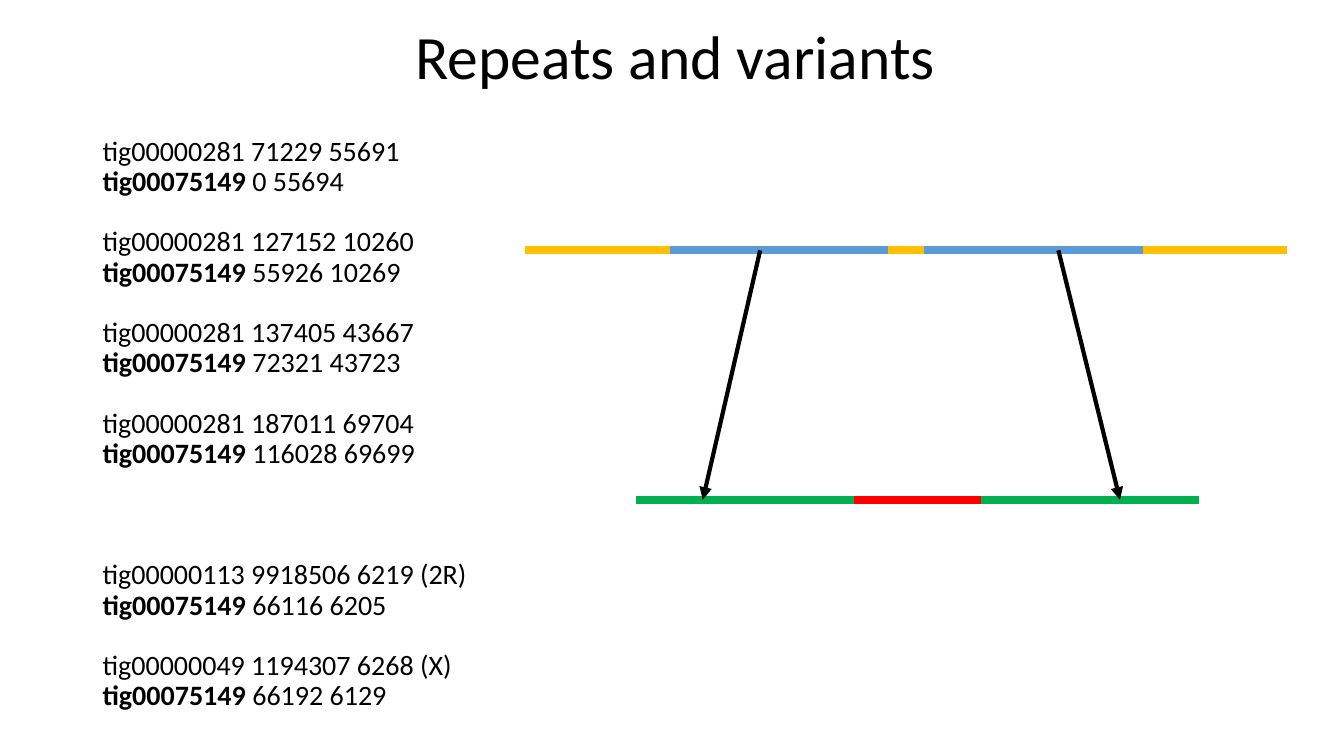
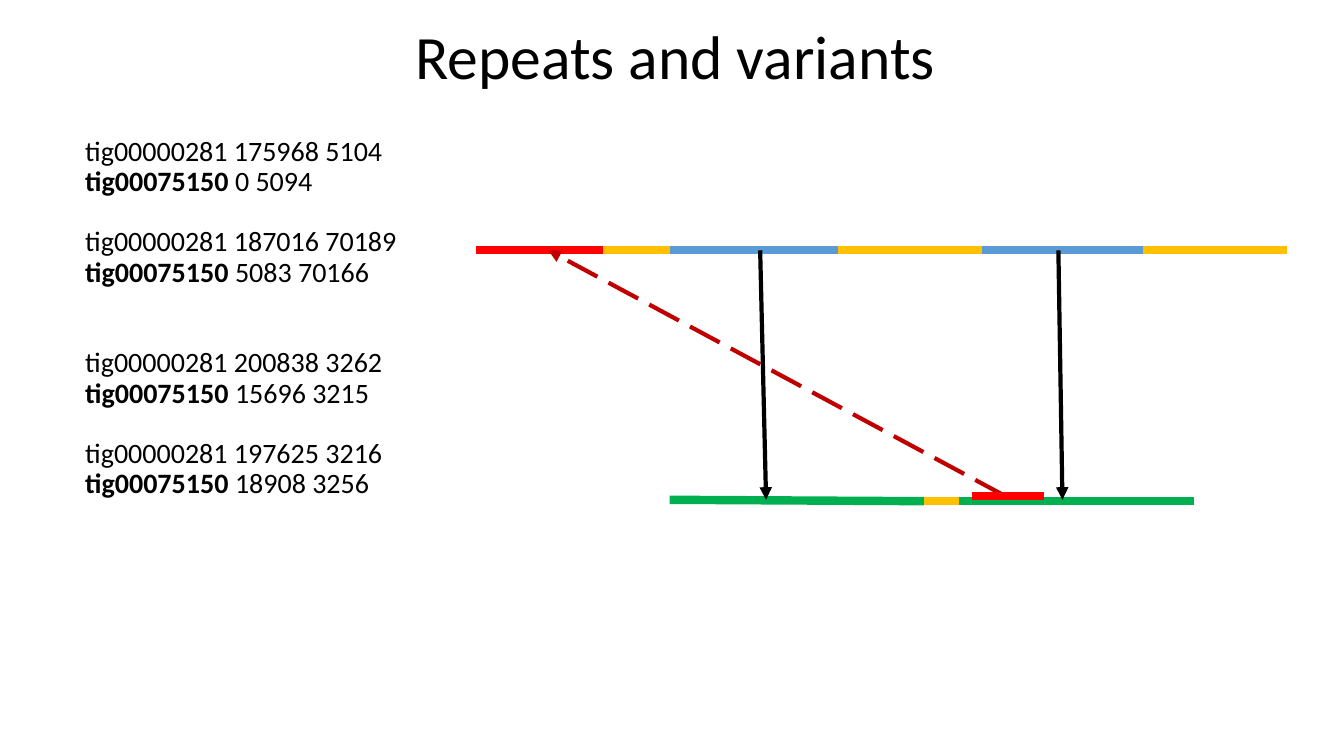
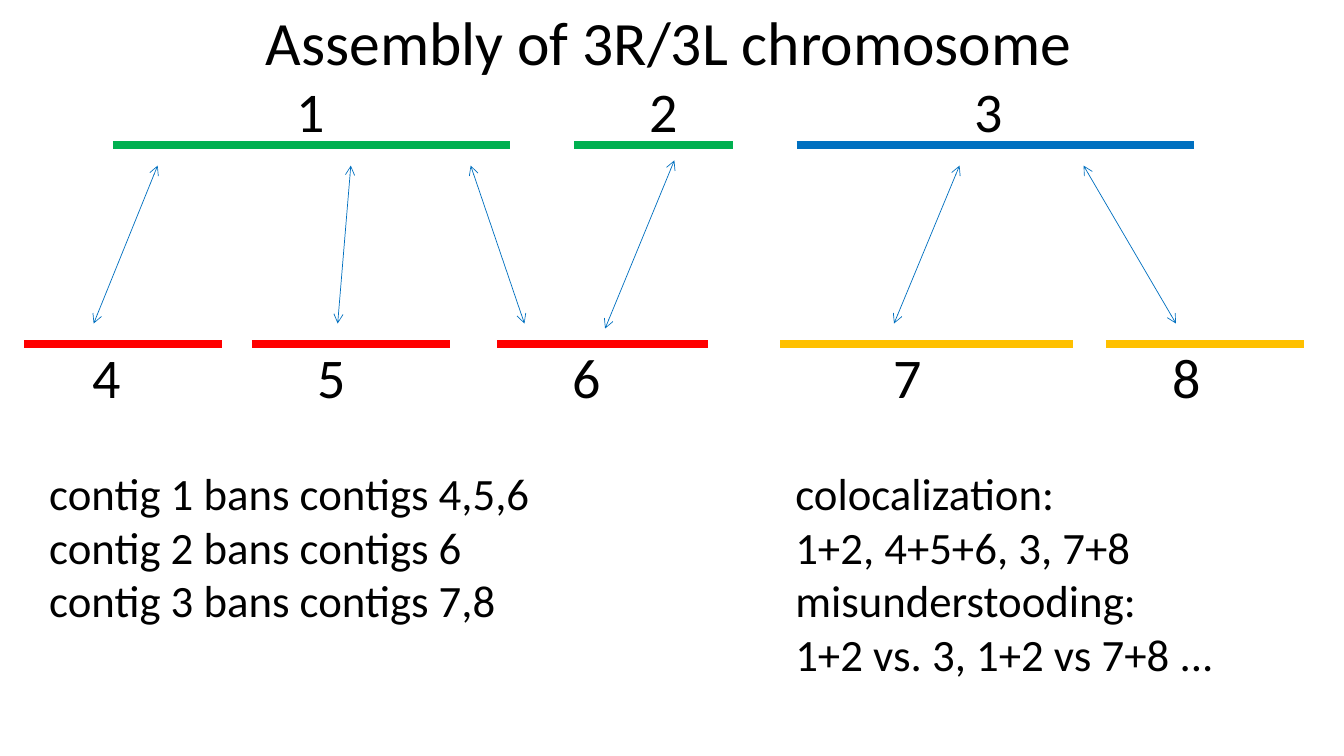
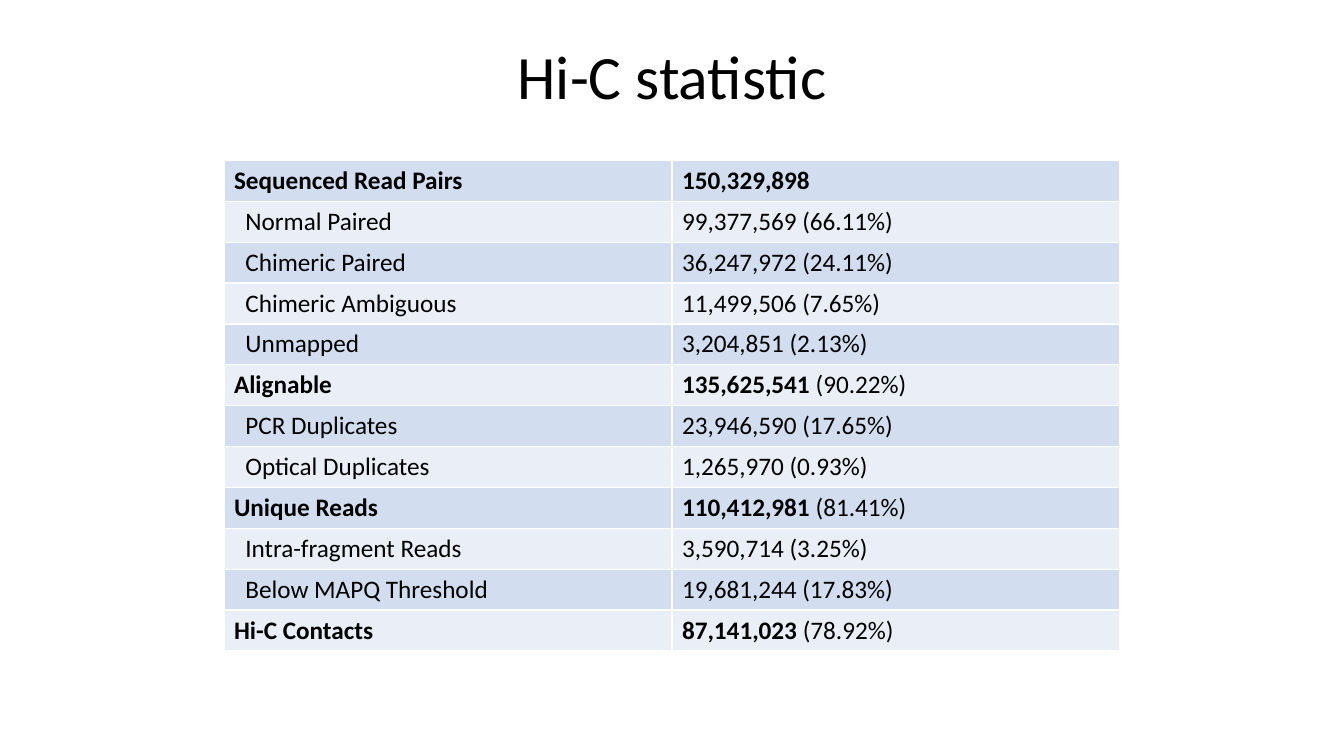
"""Build four slides on contig repeats, chromosome assembly and Hi-C statistics."""
import dataclasses

import lxml.etree
import pptx
import pptx.dml.color
import pptx.enum.dml
import pptx.enum.shapes
import pptx.enum.text
import pptx.oxml.ns
import pptx.util

Pt = pptx.util.Pt
Align = pptx.enum.text.PP_ALIGN
Anchor = pptx.enum.text.MSO_ANCHOR
Dash = pptx.enum.dml.MSO_LINE


@dataclasses.dataclass(frozen=True)
class Theme:
    font: str = "Calibri"
    black: str = "000000"
    white: str = "FFFFFF"
    green: str = "00B050"
    sky: str = "5B9BD5"
    blue: str = "0070C0"
    red: str = "FF0000"
    dark_red: str = "C00000"
    gold: str = "FFC000"
    row_fills: tuple = ("D2DEEF", "EAEFF7")
    title: float = 44
    label: float = 40
    note: float = 32
    listing: float = 20
    table: float = 18
    bar: float = 6
    arrow: float = 3
    thin_arrow: float = 0.5
    tight: float = 0.9
    listing_line: float = 21.63


THEME = Theme()

REPEAT_SLIDES = [
    {
        "title": "Repeats and variants",
        "contig": "tig00075149",
        "box": (66.2, 94.3, 380, 438.5),
        "matches": [
            (0, "tig00000281 71229 55691", "0 55694"),
            (1, "tig00000281 127152 10260", "55926 10269"),
            (1, "tig00000281 137405 43667", "72321 43723"),
            (1, "tig00000281 187011 69704", "116028 69699"),
            (3, "tig00000113 9918506 6219 (2R)", "66116 6205"),
            (1, "tig00000049 1194307 6268 (X)", "66192 6129"),
        ],
        "tracks": [
            {"edges": (375.3, 478.4, 634.3, 660.2, 816.5, 919.3), "y": 178.8,
             "colors": (THEME.gold, THEME.sky, THEME.gold, THEME.sky, THEME.gold)},
            {"edges": (454.3, 609.8, 700.7, 856.3), "y": 357,
             "colors": (THEME.green, THEME.red, THEME.green)},
        ],
        "arrows": [((543, 178.8), (502, 357)), ((756, 178.8), (800, 357))],
        "dashed_arrows": [],
        "overlays": [],
    },
    {
        "title": "Repeats and variants",
        "contig": "tig00075150",
        "box": (53.8, 94.3, 828, 342.7),
        "matches": [
            (0, "tig00000281 175968 5104", "0 5094"),
            (1, "tig00000281 187016 70189", "5083 70166"),
            (2, "tig00000281 200838 3262", "15696 3215"),
            (1, "tig00000281 197625 3216", "18908 3256"),
        ],
        "tracks": [
            {"edges": (339.8, 430.6, 478.4, 598.4, 701.3, 816.5, 919.3), "y": 178.8,
             "colors": (THEME.red, THEME.gold, THEME.sky, THEME.gold, THEME.sky, THEME.gold)},
            {"edges": (478.4, 660.2, 684.9, 852.7), "y": 358, "start_y": 357,
             "colors": (THEME.green, THEME.gold, THEME.green)},
        ],
        "arrows": [((543, 178.8), (547.2, 357)), ((756, 178.8), (758.9, 357))],
        "dashed_arrows": [((717.8, 354.2), (391.7, 178.8))],
        "overlays": [{"edges": (694.1, 745.9), "y": 354.2, "colors": (THEME.red,)}],
    },
]

ASSEMBLY = {
    "title": "Assembly of 3R/3L chromosome",
    "rows": [
        {"bar_y": 103.8, "label_y": 51.1, "contigs": [
            ("1", 80.6, 364.3, 204.5, THEME.green),
            ("2", 410.2, 523.4, 457.2, THEME.green),
            ("3", 569, 852.7, 689, THEME.blue)]},
        {"bar_y": 245.6, "label_y": 241.2, "contigs": [
            ("4", 17.2, 158.9, 59, THEME.red),
            ("5", 180, 321.7, 219.6, THEME.red),
            ("6", 355, 505.6, 401.8, THEME.red),
            ("7", 557.2, 766.7, 631.4, THEME.gold),
            ("8", 790, 931.5, 830.2, THEME.gold)]},
    ],
    "arrows": [
        ((112.6, 118.3), (66.9, 231.1)),
        ((250.6, 118.3), (241.2, 231.1)),
        ((336.2, 118.3), (374.6, 231.1)),
        ((481.7, 114.6), (432.2, 234.7)),
        ((685.4, 118.3), (638.6, 231.1)),
        ((774, 118.3), (840, 231.1)),
    ],
    "notes": [
        ((28.1, 329, 414, 123.8), [
            "contig 1 bans contigs 4,5,6",
            "contig 2 bans contigs 6",
            "contig 3 bans contigs 7,8"]),
        ((561, 329, 361.4, 162.7), [
            "colocalization:",
            "1+2, 4+5+6, 3, 7+8",
            "misunderstooding:",
            "1+2 vs. 3, 1+2 vs 7+8 ..."]),
    ],
}

STATISTICS = [
    (0, "Sequenced Read Pairs", "150,329,898", ""),
    (1, "Normal Paired", "99,377,569", "66.11%"),
    (1, "Chimeric Paired", "36,247,972", "24.11%"),
    (1, "Chimeric Ambiguous", "11,499,506", "7.65%"),
    (1, "Unmapped", "3,204,851", "2.13%"),
    (0, "Alignable", "135,625,541", "90.22%"),
    (1, "PCR Duplicates", "23,946,590", "17.65%"),
    (1, "Optical Duplicates", "1,265,970", "0.93%"),
    (0, "Unique Reads", "110,412,981", "81.41%"),
    (1, "Intra-fragment Reads", "3,590,714", "3.25%"),
    (1, "Below MAPQ Threshold", "19,681,244", "17.83%"),
    (0, "Hi-C Contacts", "87,141,023", "78.92%"),
]


def rgb(color):
    return pptx.dml.color.RGBColor.from_string(color)


def add_xml(parent, tag, **attributes):
    return lxml.etree.SubElement(parent, pptx.oxml.ns.qn(tag), attributes)


def write(frame, paragraphs, size, align=Align.LEFT, line_spacing=1.0, gaps=()):
    """Fill a text frame; each paragraph is a string or a list of (text, bold) runs."""
    frame.word_wrap = True
    for index, content in enumerate(paragraphs):
        paragraph = frame.add_paragraph() if index else frame.paragraphs[0]
        paragraph.alignment = align
        paragraph.line_spacing = line_spacing
        paragraph.space_before = Pt(gaps[index] if gaps else 0)
        for text, bold in [(content, False)] if isinstance(content, str) else content:
            run = paragraph.add_run()
            run.text = text
            run.font.name = THEME.font
            run.font.size = Pt(size)
            run.font.bold = bold
            run.font.color.rgb = rgb(THEME.black)


def add_text(slide, box, paragraphs, size, anchor=Anchor.TOP, **text_format):
    shape = slide.shapes.add_textbox(*map(Pt, box))
    shape.text_frame.vertical_anchor = anchor
    write(shape.text_frame, paragraphs, size, **text_format)


def add_title(slide, text, left=68.4, top=0, height=85):
    add_text(slide, (left, top, 828, height), [text], THEME.title, anchor=Anchor.MIDDLE,
             align=Align.CENTER, line_spacing=THEME.tight)


def add_line(slide, start, end, color, width, dash=None, head=None, tail=None):
    connector = slide.shapes.add_connector(
        pptx.enum.shapes.MSO_CONNECTOR.STRAIGHT, *map(Pt, (*start, *end)))
    connector.line.color.rgb = rgb(color)
    connector.line.width = Pt(width)
    if dash:
        connector.line.dash_style = dash
    outline = connector.line._get_or_add_ln()
    for tag, kind in (("a:headEnd", head), ("a:tailEnd", tail)):
        if kind:
            add_xml(outline, tag, type=kind)
    add_xml(connector._element.spPr, "a:effectLst")


def add_track(slide, edges, y, colors, start_y=None):
    heights = [start_y or y] + [y] * len(colors)
    points = list(zip(edges, heights))
    for start, end, color in zip(points, points[1:], colors):
        add_line(slide, start, end, color, THEME.bar)


def build_repeats(slide, content):
    add_title(slide, content["title"])
    paragraphs, gaps = [], []
    for blank_lines, reference, position in content["matches"]:
        paragraphs += [reference, [(content["contig"] + " ", True), (position, False)]]
        gaps += [blank_lines * THEME.listing_line, 0]
    add_text(slide, content["box"], paragraphs, THEME.listing,
             line_spacing=THEME.tight, gaps=gaps)
    for track in content["tracks"]:
        add_track(slide, **track)
    for start, end in content["arrows"]:
        add_line(slide, start, end, THEME.black, THEME.arrow, tail="triangle")
    for start, end in content["dashed_arrows"]:
        add_line(slide, start, end, THEME.dark_red, THEME.arrow,
                 dash=Dash.LONG_DASH, tail="triangle")
    for overlay in content["overlays"]:
        add_track(slide, **overlay)


def build_assembly(slide, content):
    add_title(slide, content["title"], left=64, height=65.5)
    for row in content["rows"]:
        for name, left, right, label_left, color in row["contigs"]:
            add_track(slide, (left, right), row["bar_y"], (color,))
            add_text(slide, (label_left, row["label_y"], 61.2, 55.4), [name], THEME.label)
    for start, end in content["arrows"]:
        add_line(slide, start, end, THEME.blue, THEME.thin_arrow, head="arrow", tail="arrow")
    for box, lines in content["notes"]:
        add_text(slide, box, lines, THEME.note)


def format_cell(cell, fill):
    properties = cell._tc.get_or_add_tcPr()
    for side in ("a:lnL", "a:lnR", "a:lnT", "a:lnB"):
        border = add_xml(properties, side, w=str(Pt(1)))
        add_xml(add_xml(border, "a:solidFill"), "a:srgbClr", val=THEME.white)
    cell.fill.solid()
    cell.fill.fore_color.rgb = rgb(fill)


def build_statistics(slide, rows):
    add_title(slide, "Hi-C statistic", left=66, top=28.5, height=56)
    row_height = 29.22
    table = slide.shapes.add_table(
        len(rows), 2, Pt(160), Pt(114.6), Pt(640), Pt(row_height * len(rows))).table
    table.first_row = table.horz_banding = False
    for index, (level, label, count, share) in enumerate(rows):
        table.rows[index].height = Pt(row_height)
        bold = level == 0
        value = [(count, bold)] + ([(f" ({share})", False)] if share else [])
        for column, runs in enumerate(([(label, bold)], value)):
            cell = table.cell(index, column)
            format_cell(cell, THEME.row_fills[index % 2])
            write(cell.text_frame, [runs], THEME.table)
        table.cell(index, 0).margin_left = Pt(7.2 + 8.1 * level)


def main():
    presentation = pptx.Presentation()
    presentation.slide_width, presentation.slide_height = Pt(960), Pt(540)
    pages = [(build_repeats, content) for content in REPEAT_SLIDES]
    pages += [(build_assembly, ASSEMBLY), (build_statistics, STATISTICS)]
    for build, content in pages:
        build(presentation.slides.add_slide(presentation.slide_layouts[6]), content)
    presentation.save("out.pptx")


if __name__ == "__main__":
    main()
